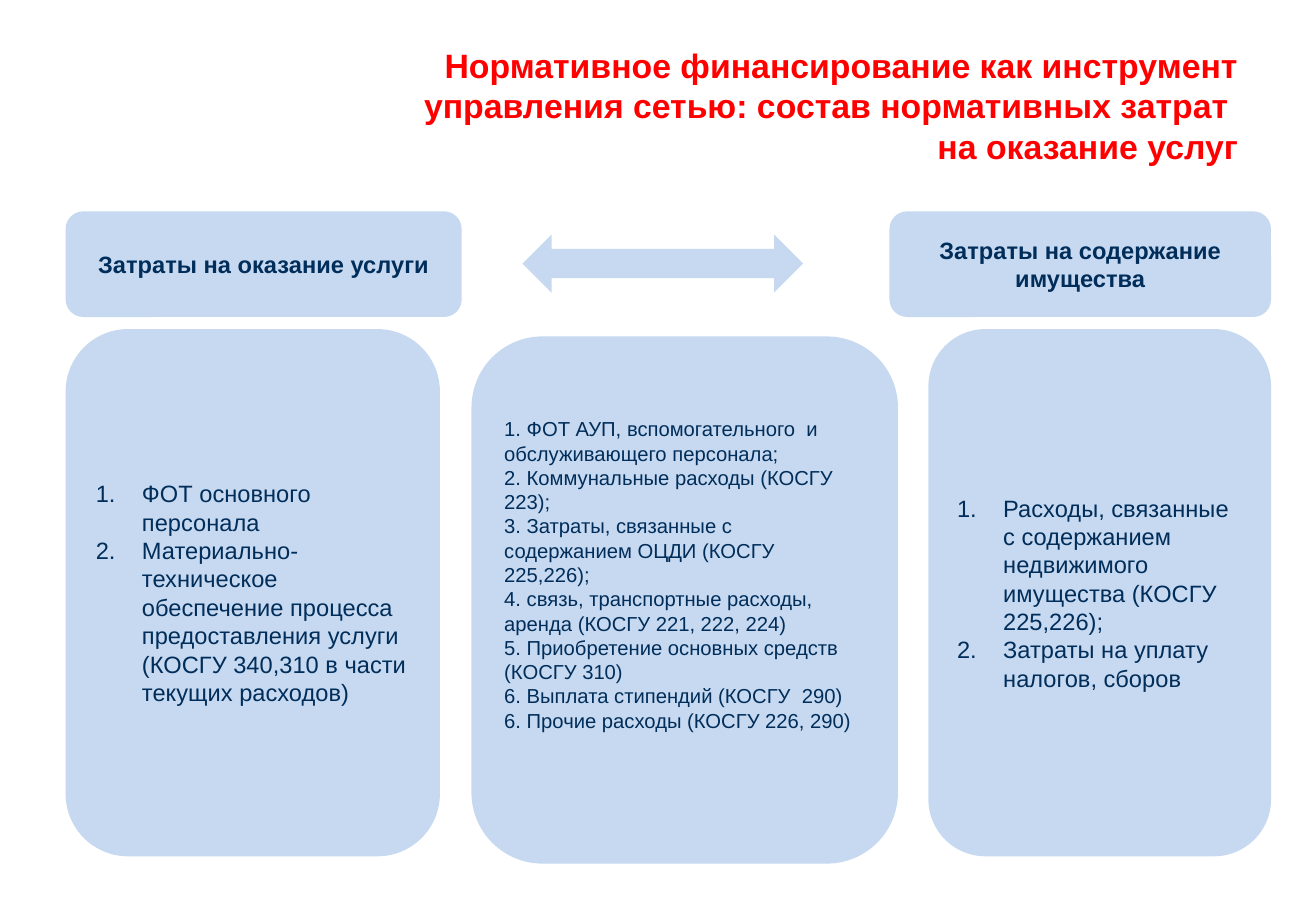
from lxml.etree import SubElement
from pptx import Presentation
from pptx.dml.color import RGBColor
from pptx.enum.shapes import MSO_SHAPE
from pptx.enum.text import MSO_ANCHOR, PP_ALIGN
from pptx.oxml.ns import qn
from pptx.util import Inches, Pt

RED = RGBColor(0xFF, 0x00, 0x00)
LIGHT_BLUE = RGBColor(0xC6, 0xD9, 0xF1)
NAVY = RGBColor(0x00, 0x2D, 0x59)
FONT = "Arial"

# Content
TITLE = ("Нормативное финансирование как инструмент управления сетью: "
         "состав нормативных затрат \vна оказание услуг")
SERVICE_COSTS = [
    "ФОТ основного персонала",
    "Материально-техническое обеспечение процесса предоставления услуги "
    "(КОСГУ 340,310 в части текущих расходов)",
]
SHARED_COSTS = [
    "1. ФОТ АУП, вспомогательного  и обслуживающего персонала;",
    "2. Коммунальные расходы (КОСГУ 223);",
    "3. Затраты, связанные с содержанием ОЦДИ (КОСГУ 225,226);",
    "4. связь, транспортные расходы, аренда (КОСГУ 221, 222, 224)",
    "5. Приобретение основных средств (КОСГУ 310)",
    "6. Выплата стипендий (КОСГУ  290)",
    "6. Прочие расходы (КОСГУ 226, 290)",
]
PROPERTY_COSTS = [
    "Расходы, связанные с содержанием недвижимого имущества (КОСГУ 225,226);",
    "Затраты на уплату налогов, сборов",
]

# Layout in inches
LEFT, RIGHT = 0.54, 10.46
HEADER_TOP, HEADER_HEIGHT = 1.74, 0.87
PANEL_TOP, PANEL_HEIGHT = 2.71, 4.34
# (left, width, text)
HEADERS = [
    (LEFT, 3.26, "Затраты на оказание услуги"),
    (RIGHT - 3.14, 3.14, "Затраты на содержание имущества"),
]
# (left, width, top offset, items, size, numbered, bottom inset)
PANELS = [
    (LEFT, 3.08, 0, SERVICE_COSTS, 14, True, 0.05),
    (3.88, 3.51, 0.06, SHARED_COSTS, 12, False, 0.47),
    (RIGHT - 2.82, 2.82, 0, PROPERTY_COSTS, 14, True, 0.05),
]


def add_block(slide, kind, left, top, width, height):
    shape = slide.shapes.add_shape(
        kind, Inches(left), Inches(top), Inches(width), Inches(height))
    shape.shadow.inherit = False
    shape.fill.solid()
    shape.fill.fore_color.rgb = LIGHT_BLUE
    shape.line.fill.background()
    return shape


def number_paragraph(paragraph):
    properties = paragraph._p.get_or_add_pPr()
    properties.set("marL", str(Inches(0.38)))
    properties.set("indent", str(-Inches(0.38)))
    SubElement(properties, qn("a:buFont"), typeface="+mj-lt")
    SubElement(properties, qn("a:buAutoNum"), type="arabicPeriod")


def write_text(shape, lines, size, color, align, bold=False, numbered=False):
    text_frame = shape.text_frame
    text_frame.word_wrap = True
    text_frame.vertical_anchor = MSO_ANCHOR.MIDDLE
    for index, line in enumerate(lines):
        paragraph = text_frame.add_paragraph() if index else text_frame.paragraphs[0]
        paragraph.text = line
        paragraph.alignment = align
        if numbered:
            number_paragraph(paragraph)
        for run in paragraph.runs:
            run.font.name = FONT
            run.font.size = Pt(size)
            run.font.bold = bold
            run.font.color.rgb = color


presentation = Presentation()
presentation.slide_width = Inches(10.83)
presentation.slide_height = Inches(7.5)
slide = presentation.slides.add_slide(presentation.slide_layouts[5])

# Title
title = slide.shapes.title
title.left, title.top = Inches(2.27), Inches(0.3)
title.width, title.height = Inches(8.02), Inches(1.13)
write_text(title, [TITLE], 20, RED, PP_ALIGN.RIGHT, bold=True)

# Cost panels
for left, width, offset, items, size, numbered, bottom in PANELS:
    panel = add_block(slide, MSO_SHAPE.ROUNDED_RECTANGLE,
                      left, PANEL_TOP + offset, width, PANEL_HEIGHT)
    panel.text_frame.margin_bottom = Inches(bottom)
    write_text(panel, items, size, NAVY, PP_ALIGN.LEFT, numbered=numbered)

# Headers and the arrow between them
for left, width, text in HEADERS:
    header = add_block(slide, MSO_SHAPE.ROUNDED_RECTANGLE,
                       left, HEADER_TOP, width, HEADER_HEIGHT)
    write_text(header, [text], 14, NAVY, PP_ALIGN.CENTER, bold=True)
add_block(slide, MSO_SHAPE.LEFT_RIGHT_ARROW, 4.3, 1.93, 2.31, 0.48)

presentation.save("out.pptx")
